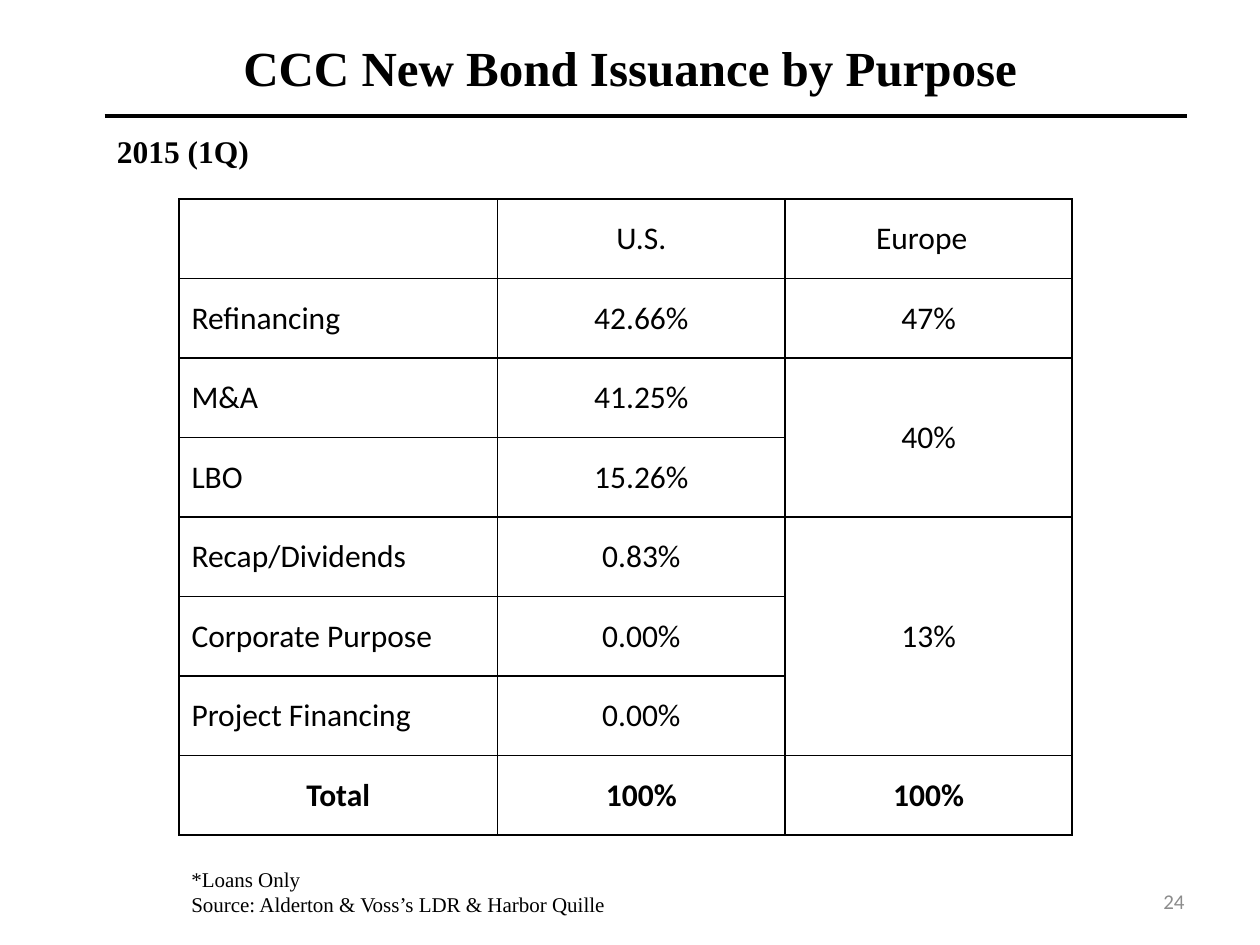
from lxml.etree import SubElement
from pptx import Presentation
from pptx.dml.color import RGBColor
from pptx.enum.shapes import MSO_CONNECTOR
from pptx.enum.text import MSO_ANCHOR, MSO_AUTO_SIZE, PP_ALIGN
from pptx.oxml import parse_xml
from pptx.oxml.ns import nsdecls, qn
from pptx.util import Inches, Pt

BLACK = RGBColor(0x00, 0x00, 0x00)
GRAY = RGBColor(0x8C, 0x8C, 0x8C)
SERIF = "Times New Roman"
SANS = "Calibri"
ROWS = [
    ("", "U.S.", "Europe"),
    ("Refinancing", "42.66%", "47%"),
    ("M&A", "41.25%", "40%"),
    ("LBO", "15.26%", ""),
    ("Recap/Dividends", "0.83%", "13%"),
    ("Corporate Purpose", "0.00%", ""),
    ("Project Financing", "0.00%", ""),
    ("Total", "100%", "100%"),
]
WIDTHS = (2.53, 2.28, 2.28)
MERGES = ((2, 3), (4, 6))


def write(frame, text, size=18, font=SANS, color=BLACK, bold=False,
          align=PP_ALIGN.LEFT):
    for i, line in enumerate(text.split("\n")):
        para = frame.paragraphs[0] if i == 0 else frame.add_paragraph()
        para.alignment = align
        run = para.add_run()
        run.text = line
        run.font.size = Pt(size)
        run.font.name = font
        run.font.bold = bold
        run.font.color.rgb = color


def label(slide, box, text, anchor=MSO_ANCHOR.TOP, **style):
    frame = slide.shapes.add_textbox(*map(Inches, box)).text_frame
    frame.word_wrap = True
    frame.vertical_anchor = anchor
    write(frame, text, **style)


def header(slide, box):
    left, top, width, height = box
    title = slide.shapes.title
    title.left, title.top = Inches(left + 0.17), Inches(top)
    title.width, title.height = Inches(8), Inches(0.57)
    frame = title.text_frame
    frame.auto_size = MSO_AUTO_SIZE.NONE
    frame.vertical_anchor = MSO_ANCHOR.TOP
    write(frame, "CCC New Bond Issuance by Purpose", size=28, font=SERIF,
          bold=True, align=PP_ALIGN.CENTER)
    level = Inches(top + 0.67)
    rule = slide.shapes.add_connector(
        MSO_CONNECTOR.STRAIGHT, Inches(left), level, Inches(left + width), level)
    rule.line.color.rgb = BLACK
    rule.line.width = Pt(2.25)
    SubElement(rule._element.spPr, qn("a:effectLst"))
    label(slide, (left, top + height - 0.4, 3.5, 0.4), "2015 (1Q)",
          font=SERIF, bold=True)


def border(cell):
    props = cell._tc.get_or_add_tcPr()
    for i, side in enumerate(("lnL", "lnR", "lnT", "lnB")):
        props.insert(i, parse_xml(
            f'<a:{side} {nsdecls("a")} w="{Pt(1)}"><a:solidFill>'
            f'<a:srgbClr val="{BLACK}"/></a:solidFill></a:{side}>'))


def grid(slide, box):
    count = len(ROWS)
    table = slide.shapes.add_table(
        count, len(WIDTHS), *map(Inches, box)).table
    table.first_row = table.horz_banding = False
    for col, width in zip(table.columns, WIDTHS):
        col.width = Inches(width)
    for r, row in enumerate(ROWS):
        table.rows[r].height = Inches(box[3] / count)
        total = r == count - 1
        for c, text in enumerate(row):
            cell = table.cell(r, c)
            cell.fill.background()
            cell.vertical_anchor = MSO_ANCHOR.MIDDLE
            border(cell)
            if text:
                middle = c > 0 or total
                write(cell.text_frame, text, bold=total,
                      align=PP_ALIGN.CENTER if middle else PP_ALIGN.LEFT)
    table.cell(0, 2).margin_right = Inches(0.21)
    for first, last in MERGES:
        table.cell(first, 2).merge(table.cell(last, 2))


def footer(slide, box):
    left, top, width, height = box
    label(slide, (left, top, 3.92, height),
          "*Loans Only\nSource: Alderton & Voss’s LDR & Harbor Quille",
          size=12, font=SERIF)
    label(slide, (left + width - 2.33, top + 0.12, 2.33, 0.4), "24",
          anchor=MSO_ANCHOR.MIDDLE, size=12, color=GRAY, align=PP_ALIGN.RIGHT)


def main():
    deck = Presentation()
    deck.slide_width, deck.slide_height = Inches(10), Inches(7.5)
    slide = deck.slides.add_slide(deck.slide_layouts[5])
    header(slide, (0.83, 0.25, 8.59, 1.15))
    grid(slide, (1.42, 1.58, 7.08, 5.05))
    footer(slide, (1.42, 6.83, 8.08, 0.5))
    deck.save("out.pptx")


if __name__ == "__main__":
    main()
